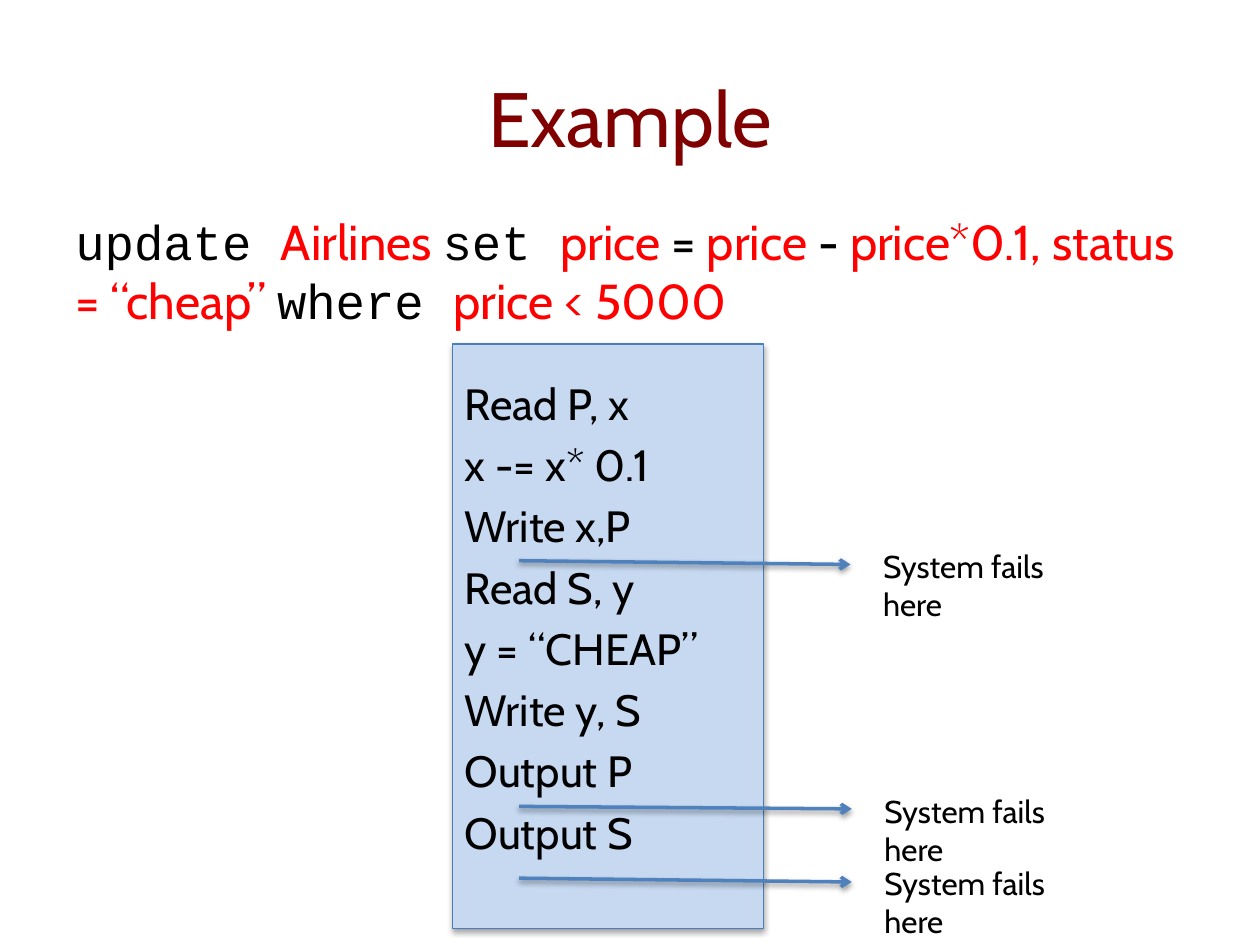
from dataclasses import dataclass

from lxml import etree
from pptx import Presentation
from pptx.dml.color import RGBColor
from pptx.enum.shapes import MSO_CONNECTOR, MSO_SHAPE
from pptx.enum.text import MSO_ANCHOR, PP_ALIGN
from pptx.oxml.ns import qn
from pptx.util import Inches, Pt

STRAIGHT = MSO_CONNECTOR.STRAIGHT
RECTANGLE = MSO_SHAPE.RECTANGLE
TOP, MIDDLE = MSO_ANCHOR.TOP, MSO_ANCHOR.MIDDLE
LEFT, CENTER = PP_ALIGN.LEFT, PP_ALIGN.CENTER

SANS, MONO = "Cabin", "Courier New"
BLACK, RED, MAROON = "000000", "FF0000", "800000"
PANEL_FILL, PANEL_LINE, ARROW_BLUE = "C6D9F1", "4B7EBC", "4F81BD"


@dataclass
class Span:
    text: str
    color: str = BLACK
    font: str = SANS


@dataclass
class Failure:
    """A point in the program where the system may fail."""
    left: float
    top: float
    drop: float


QUERY = [
    Span("update ", font=MONO), Span("Airlines ", RED),
    Span("set ", font=MONO), Span("price", RED), Span(" = "),
    Span("price ", RED), Span("- "),
    Span("price*0.1, status = “cheap” ", RED),
    Span("where ", font=MONO), Span("price < 5000", RED),
]
STEPS = ["Read P, x", "x -= x* 0.1", "Write x,P", "Read S, y",
         "y = “CHEAP”", "Write y, S", "Output P", "Output S"]
FAILURES = [Failure(6.92, 6.4, 0.02), Failure(6.92, 6.97, 0.03),
            Failure(6.91, 4.45, 0.03)]


def rgb(color: str) -> RGBColor:
    return RGBColor.from_string(color)


def write_text(shape, paragraphs: list[list[Span]], *, size: float,
               align=LEFT, anchor=TOP, before: float = 0) -> None:
    frame = shape.text_frame
    frame.word_wrap = True
    frame.vertical_anchor = anchor
    for index, spans in enumerate(paragraphs):
        para = frame.add_paragraph() if index else frame.paragraphs[0]
        para.alignment = align
        para.space_before = Pt(before)
        for span in spans:
            run = para.add_run()
            run.text = span.text
            run.font.size = Pt(size)
            run.font.name = span.font
            run.font.color.rgb = rgb(span.color)


def add_text(page, left: float, top: float, width: float, height: float,
             spans: list[Span], **formatting) -> None:
    box = page.shapes.add_textbox(Inches(left), Inches(top),
                                  Inches(width), Inches(height))
    write_text(box, [spans], **formatting)


def add_shadow(shape, *, distance: float, opacity: int) -> None:
    """Cast a soft shadow straight down; call after fill and line are set."""
    effects = etree.SubElement(shape._element.spPr, qn("a:effectLst"))
    shadow = etree.SubElement(
        effects, qn("a:outerShdw"), blurRad=str(Pt(3.1)),
        dist=str(Pt(distance)), dir="5400000", rotWithShape="0")
    color = etree.SubElement(shadow, qn("a:srgbClr"), val=BLACK)
    etree.SubElement(color, qn("a:alpha"), val=str(opacity * 1000))


def add_program(page) -> None:
    panel = page.shapes.add_shape(RECTANGLE, Inches(3.59), Inches(2.73),
                                  Inches(2.47), Inches(4.64))
    panel.fill.solid()
    panel.fill.fore_color.rgb = rgb(PANEL_FILL)
    panel.line.color.rgb = rgb(PANEL_LINE)
    panel.line.width = Pt(0.75)
    add_shadow(panel, distance=1.8, opacity=35)
    write_text(panel, [[Span(step)] for step in STEPS],
               size=25, anchor=MIDDLE, before=5)
    panel.text_frame.margin_bottom = Inches(0.35)


def add_failure(page, failure: Failure) -> None:
    arrow = page.shapes.add_connector(
        STRAIGHT, Inches(4.12), Inches(failure.top),
        Inches(failure.left - 0.16), Inches(failure.top + failure.drop))
    arrow.line.color.rgb = rgb(ARROW_BLUE)
    arrow.line.width = Pt(2)
    etree.SubElement(arrow.line._get_or_add_ln(), qn("a:tailEnd"), type="arrow")
    add_shadow(arrow, distance=1.6, opacity=38)
    add_text(page, failure.left, failure.top - 0.16, 1.91, 0.4,
             [Span("System fails here")], size=18)


def main() -> None:
    deck = Presentation()
    deck.slide_width, deck.slide_height = Inches(10), Inches(7.5)
    page = deck.slides.add_slide(deck.slide_layouts[6])

    # Title, program panel and the query it carries out
    add_text(page, 0.5, 0.3, 9, 1.25, [Span("Example", MAROON)],
             size=44, align=CENTER, anchor=MIDDLE)
    add_program(page)
    add_text(page, 0.5, 1.63, 9, 0.98, QUERY, size=28, before=5.6)

    # Failure points
    for failure in FAILURES:
        add_failure(page, failure)

    deck.save("out.pptx")


if __name__ == "__main__":
    main()
